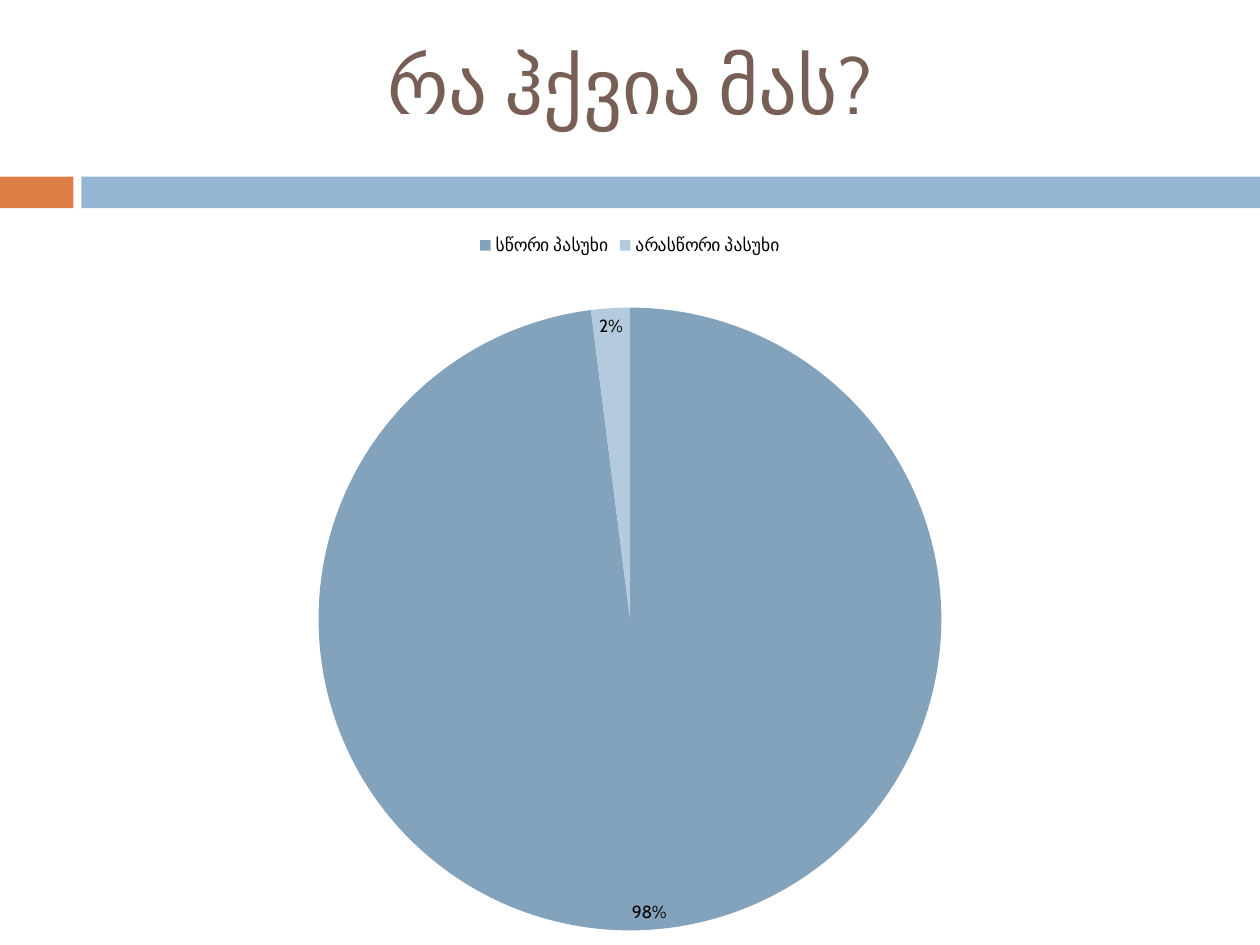
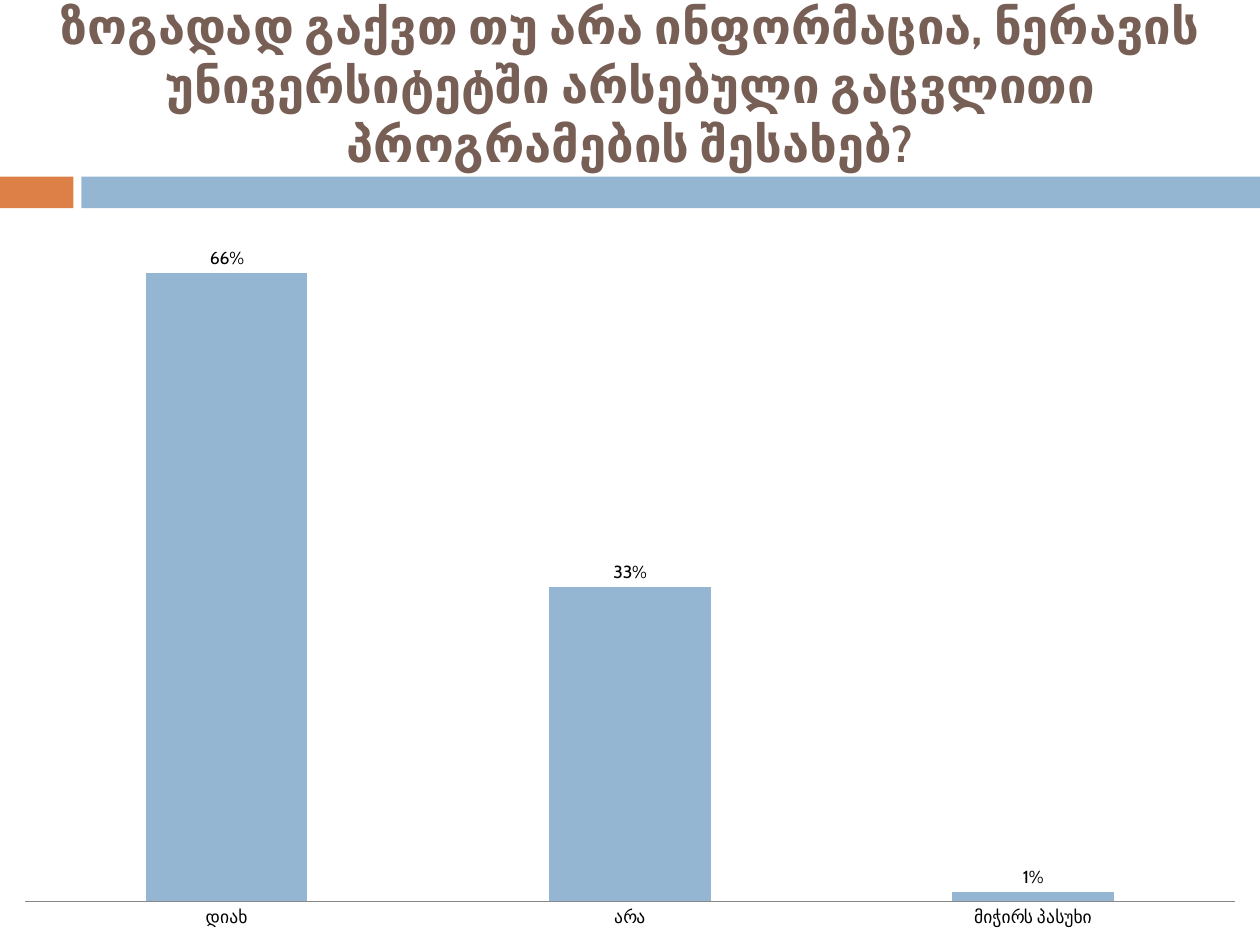
from lxml import etree
from pptx import Presentation
from pptx.chart.data import CategoryChartData
from pptx.dml.color import RGBColor
from pptx.enum.chart import XL_CHART_TYPE, XL_LABEL_POSITION, XL_LEGEND_POSITION, XL_TICK_MARK
from pptx.enum.shapes import MSO_SHAPE
from pptx.enum.text import MSO_ANCHOR, PP_ALIGN
from pptx.oxml.ns import qn
from pptx.util import Cm, Pt

PIE, COLUMN = XL_CHART_TYPE.PIE, XL_CHART_TYPE.COLUMN_CLUSTERED
INSIDE_END, OUTSIDE_END = XL_LABEL_POSITION.INSIDE_END, XL_LABEL_POSITION.OUTSIDE_END
LEGEND_TOP, NO_TICK = XL_LEGEND_POSITION.TOP, XL_TICK_MARK.NONE
RECTANGLE, MIDDLE, CENTER = MSO_SHAPE.RECTANGLE, MSO_ANCHOR.MIDDLE, PP_ALIGN.CENTER

FONT = "Cabin"
ORANGE = RGBColor(0xDD, 0x80, 0x47)
BLUE = RGBColor(0x94, 0xB6, 0xD2)
BROWN = RGBColor(0x77, 0x5F, 0x55)
BLACK = RGBColor(0, 0, 0)
GRAY = RGBColor(0x88, 0x88, 0x88)
SLICE_COLORS = RGBColor(0x83, 0xA2, 0xBC), RGBColor(0xB4, 0xCA, 0xDE)

SLIDE_WIDTH, SLIDE_HEIGHT = Cm(25.4), Cm(19.05)
TITLE_HEIGHT = Cm(3.38)
BAND_TOP, BAND_HEIGHT = Cm(3.56), Cm(0.64)
TAB_WIDTH, BAND_LEFT = Cm(1.48), Cm(1.64)
CHART_TOP = Cm(4.45)

# "plot" is the inner plot area as fractions of the chart: left, top, width, height
QUESTIONS = [
    {
        "title": "რა ჰქვია მას?",
        "title_format": {"size": Pt(44), "bold": False},
        "kind": PIE,
        "answers": {"სწორი პასუხი": 98, "არასწორი პასუხი": 2},
        "plot": (0.25, 0.12, 0.5, 0.86),
    },
    {
        "title": "ზოგადად გაქვთ თუ არა ინფორმაცია, ნერავის უნივერსიტეტში "
                 "არსებული გაცვლითი პროგრამების შესახებ?",
        "title_format": {"size": Pt(28), "bold": True},
        "kind": COLUMN,
        "answers": {"დიახ": 0.66, "არა": 0.33, "მიჭირს პასუხი": 0.01},
        "plot": (0.02, 0.02, 0.96, 0.92),
    },
]


def set_format(target, values):
    for name, value in values.items():
        setattr(target, name, value)


def paint(part, color):
    part.fill.solid()
    part.fill.fore_color.rgb = color


def add_bands(page):
    for left, right, color in [(0, TAB_WIDTH, ORANGE), (BAND_LEFT, SLIDE_WIDTH, BLUE)]:
        band = page.shapes.add_shape(RECTANGLE, left, BAND_TOP, right - left, BAND_HEIGHT)
        band.shadow.inherit = False
        paint(band, color)
        band.line.fill.background()


def add_title(page, title, title_format):
    box = page.shapes.add_textbox(0, 0, SLIDE_WIDTH, TITLE_HEIGHT)
    set_format(box.text_frame, {"word_wrap": True, "vertical_anchor": MIDDLE})
    para = box.text_frame.paragraphs[0]
    para.alignment = CENTER
    span = para.add_run()
    span.text = title
    set_format(span.font, {"name": FONT, **title_format})
    span.font.color.rgb = BROWN


def place_plot(chart, fractions):
    """Fix the inner plot area at the given fractions of the chart."""
    area = chart._chartSpace.chart.plotArea
    for old in area.findall(qn("c:layout")):
        area.remove(old)
    layout = etree.Element(qn("c:layout"))
    manual = etree.SubElement(layout, qn("c:manualLayout"))
    settings = [("layoutTarget", "inner"), ("xMode", "edge"), ("yMode", "edge")]
    settings += zip("xywh", fractions)
    for name, value in settings:
        etree.SubElement(manual, qn(f"c:{name}")).set("val", str(value))
    area.insert(0, layout)


def style_pie(chart):
    chart.has_legend = True
    set_format(chart.legend, {"position": LEGEND_TOP, "include_in_layout": False})
    plot = chart.plots[0]
    plot.vary_by_categories = True
    for index, color in enumerate(SLICE_COLORS):
        paint(plot.series[0].points[index].format, color)
    set_format(plot.data_labels, {"show_percentage": True, "show_value": False,
                                  "position": INSIDE_END})


def style_columns(chart):
    chart.has_legend = False
    plot = chart.plots[0]
    set_format(plot, {"vary_by_categories": False, "gap_width": 150, "overlap": -25})
    paint(plot.series[0].format, BLUE)
    set_format(plot.data_labels, {"show_value": True, "position": OUTSIDE_END})
    set_format(chart.value_axis, {"visible": False, "has_major_gridlines": False,
                                  "minimum_scale": 0, "maximum_scale": 0.7})
    set_format(chart.category_axis, {"major_tick_mark": NO_TICK, "minor_tick_mark": NO_TICK})
    chart.category_axis.format.line.color.rgb = GRAY
    chart.category_axis.format.line.width = Pt(0.75)


STYLES = {PIE: style_pie, COLUMN: style_columns}


def add_answer_chart(page, kind, answers, plot_fractions):
    data = CategoryChartData()
    data.categories = list(answers)
    data.add_series("Series 1", list(answers.values()))
    frame = page.shapes.add_chart(kind, 0, CHART_TOP, SLIDE_WIDTH,
                                  SLIDE_HEIGHT - CHART_TOP, data)
    chart = frame.chart
    chart.has_title = False
    set_format(chart.font, {"name": FONT, "size": Pt(10)})
    chart.font.color.rgb = BLACK
    chart.plots[0].has_data_labels = True
    set_format(chart.plots[0].data_labels, {"number_format": "0%",
                                            "number_format_is_linked": False})
    STYLES[kind](chart)
    place_plot(chart, plot_fractions)


def main():
    deck = Presentation()
    set_format(deck, {"slide_width": SLIDE_WIDTH, "slide_height": SLIDE_HEIGHT})
    for question in QUESTIONS:
        page = deck.slides.add_slide(deck.slide_layouts[6])
        add_bands(page)
        add_title(page, question["title"], question["title_format"])
        add_answer_chart(page, question["kind"], question["answers"], question["plot"])
    deck.save("out.pptx")


if __name__ == "__main__":
    main()
